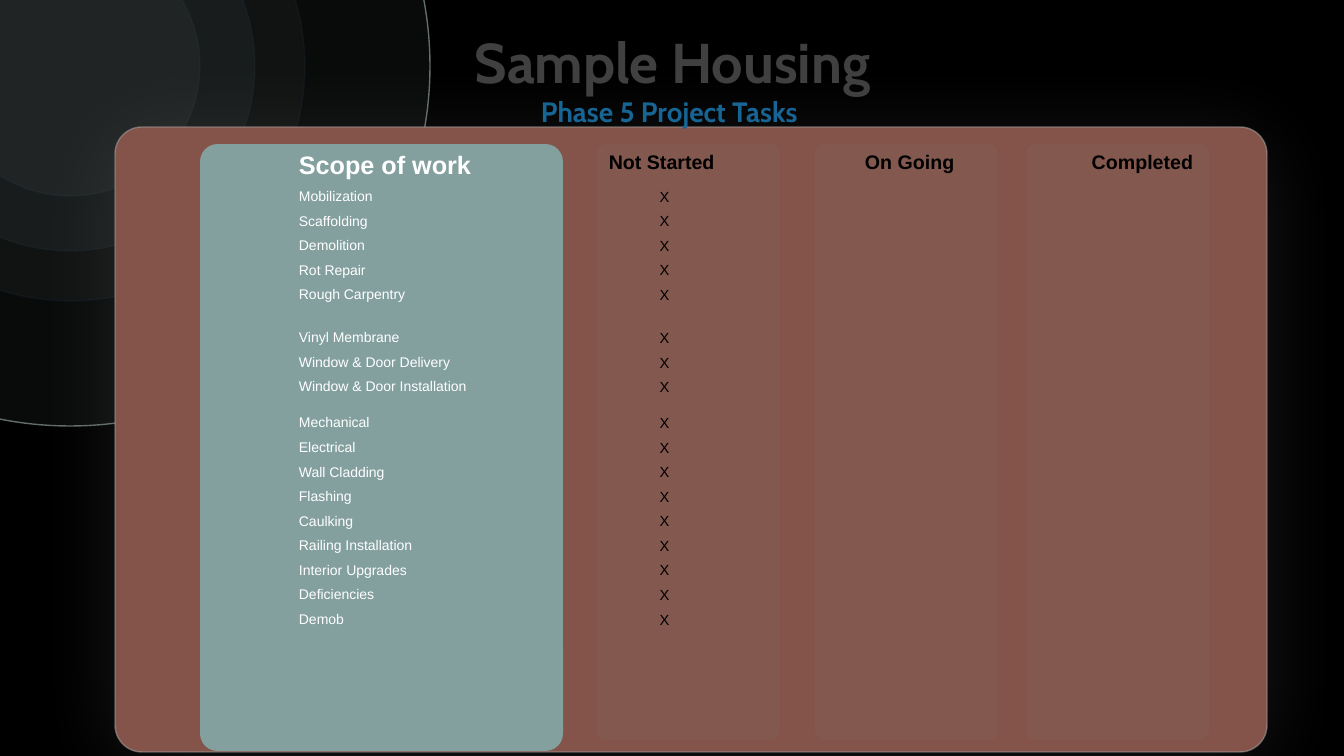
from dataclasses import dataclass
from typing import Optional

import lxml.etree
import pptx
import pptx.dml.color
import pptx.enum.shapes
import pptx.enum.text
import pptx.oxml
import pptx.oxml.ns
import pptx.util

RGBColor = pptx.dml.color.RGBColor
MSO_SHAPE = pptx.enum.shapes.MSO_SHAPE
PP_ALIGN = pptx.enum.text.PP_ALIGN
qn = pptx.oxml.ns.qn

BLACK = RGBColor(0x00, 0x00, 0x00)
WHITE = RGBColor(0xFF, 0xFF, 0xFF)
MIST = RGBColor(0xB8, 0xC8, 0xC8)
NAVY = RGBColor(0x27, 0x5A, 0x82)
BRICK = RGBColor(0x84, 0x53, 0x49)
SILVER = RGBColor(0xA6, 0xA6, 0xA6)
SAGE = RGBColor(0x83, 0xA0, 0x9F)
CHARCOAL = RGBColor(0x40, 0x40, 0x40)
BLUE = RGBColor(0x17, 0x65, 0x94)

EMU_PER_PX = 914400 / 100.8
NO_GRID_STYLE = "{2D5ABB26-0587-4C30-8999-92F81FD0307C}"
HEADINGS = ["Scope of work", "Not Started ", "On Going ", "Completed"]
TASKS = [
    "Mobilization", "Scaffolding", "Demolition", "Rot Repair", "Rough Carpentry",
    "Vinyl Membrane", "Window & Door Delivery", "Window & Door Installation",
    "Mechanical", "Electrical", "Wall Cladding", "Flashing", "Caulking",
    "Railing Installation", "Interior Upgrades", "Deficiencies", "Demob",
]
COLUMN_WIDTHS = [229, 283, 213, 247]
PHASE_END_HEIGHTS = {"Rough Carpentry": 43, "Window & Door Installation": 36}


@dataclass(frozen=True)
class Panel:
    left: int
    top: int
    width: int
    height: int
    fill: RGBColor
    fill_alpha: int = 100
    line: Optional[RGBColor] = None
    line_alpha: int = 100
    corner: Optional[float] = None


@dataclass(frozen=True)
class Ring:
    radius: int
    line: RGBColor
    line_alpha: int

    def panel(self, center_x: int, center_y: int) -> Panel:
        return Panel(center_x - self.radius, center_y - self.radius,
                     2 * self.radius, 2 * self.radius,
                     MIST, 5, self.line, self.line_alpha)


RINGS = [Ring(360, MIST, 52), Ring(130, NAVY, 10), Ring(185, NAVY, 10), Ring(235, NAVY, 10)]
BOARD = Panel(115, 127, 1152, 625, BRICK, line=SILVER, line_alpha=53, corner=0.043)
SCOPE = Panel(200, 144, 363, 607, SAGE, corner=0.048)
STATUS_TRACKS = [Panel(left, 144, 183, 596, SAGE, 7, corner=0.048)
                 for left in (597, 1026, 815)]


def px(length: int) -> pptx.util.Emu:
    return pptx.util.Emu(round(length * EMU_PER_PX))


def set_alpha(color_parent, percent: int) -> None:
    color = color_parent.find(qn("a:solidFill"))[0]
    lxml.etree.SubElement(color, qn("a:alpha")).set("val", str(percent * 1000))


def draw_panel(slide, panel: Panel):
    kind = MSO_SHAPE.OVAL if panel.corner is None else MSO_SHAPE.ROUNDED_RECTANGLE
    shape = slide.shapes.add_shape(
        kind, px(panel.left), px(panel.top), px(panel.width), px(panel.height))
    shape.shadow.inherit = False
    if panel.corner is not None:
        shape.adjustments[0] = panel.corner
    shape.fill.solid()
    shape.fill.fore_color.rgb = panel.fill
    properties = shape.element.spPr
    set_alpha(properties, panel.fill_alpha)
    if panel.line is None:
        shape.line.fill.background()
    else:
        shape.line.color.rgb = panel.line
        shape.line.width = pptx.util.Pt(1)
        set_alpha(properties.find(qn("a:ln")), panel.line_alpha)
    return shape


def cast_shadow(shape) -> None:
    shadow = pptx.oxml.parse_xml(
        f'<a:outerShdw xmlns:a="{pptx.oxml.ns.nsdecls("a").split(chr(34))[1]}" '
        'blurRad="787400" dist="88900" dir="5400000" algn="t" rotWithShape="0">'
        '<a:srgbClr val="808080"><a:alpha val="18000"/></a:srgbClr></a:outerShdw>')
    shape.element.spPr.find(qn("a:effectLst")).append(shadow)


def write_text(frame, text: str, *, size: float, color: RGBColor = BLACK,
               font: str = "Arial", bold: bool = False,
               align: PP_ALIGN = PP_ALIGN.LEFT,
               line_spacing: Optional[float] = None) -> None:
    paragraph = frame.paragraphs[0]
    paragraph.alignment = align
    paragraph.line_spacing = line_spacing
    if not text:
        end = lxml.etree.SubElement(paragraph._p, qn("a:endParaRPr"))
        end.set("sz", str(round(size * 100)))
        return
    run = paragraph.add_run()
    run.text = text
    run.font.size = pptx.util.Pt(size)
    run.font.name = font
    run.font.bold = bold
    run.font.color.rgb = color


def draw_heading(slide, text: str, top: int, height: int, size: int, color: RGBColor) -> None:
    box = slide.shapes.add_textbox(px(195), px(top), px(955), px(height))
    box.text_frame.word_wrap = True
    write_text(box.text_frame, text, size=size, color=color, font="Cabin", bold=True,
               align=PP_ALIGN.CENTER, line_spacing=0.9)


def draw_tasks(slide) -> None:
    rows = [HEADINGS] + [[task, "X", "", ""] for task in TASKS]
    task_height = px(123) // 5
    heights = [px(37)] + [
        px(PHASE_END_HEIGHTS[task]) if task in PHASE_END_HEIGHTS else task_height
        for task in TASKS]
    frame = slide.shapes.add_table(
        len(rows), len(HEADINGS), px(294), px(150), px(sum(COLUMN_WIDTHS)), sum(heights))
    table = frame.table
    table.first_row = False
    table.horz_banding = False
    next(frame.element.iter(qn("a:tableStyleId"))).text = NO_GRID_STYLE
    for column, width in zip(table.columns, COLUMN_WIDTHS):
        column.width = px(width)
    for row_index, (texts, height) in enumerate(zip(rows, heights)):
        table.rows[row_index].height = height
        is_header = row_index == 0
        for column_index, text in enumerate(texts):
            is_scope = column_index == 0
            cell = table.cell(row_index, column_index)
            cell.fill.background()
            cell.margin_left = cell.margin_right = px(5)
            cell.margin_top = cell.margin_bottom = px(2)
            scope_size, status_size = (18, 14) if is_header else (10, 10.5)
            write_text(cell.text_frame, text,
                       size=scope_size if is_scope else status_size,
                       color=WHITE if is_scope else BLACK, bold=is_header,
                       align=PP_ALIGN.LEFT if is_scope else PP_ALIGN.CENTER)


def main() -> None:
    presentation = pptx.Presentation()
    presentation.slide_width = px(1344)
    presentation.slide_height = px(756)
    slide = presentation.slides.add_slide(presentation.slide_layouts[6])
    slide.background.fill.solid()
    slide.background.fill.fore_color.rgb = BLACK
    for ring in RINGS:
        draw_panel(slide, ring.panel(70, 66))
    cast_shadow(draw_panel(slide, BOARD))
    for panel in [SCOPE, *STATUS_TRACKS]:
        draw_panel(slide, panel)
    draw_tasks(slide)
    draw_heading(slide, "Sample Housing", 30, 132, 40, CHARCOAL)
    draw_heading(slide, "Phase 5 Project Tasks ", 93, 40, 20, BLUE)
    presentation.save("out.pptx")


if __name__ == "__main__":
    main()
